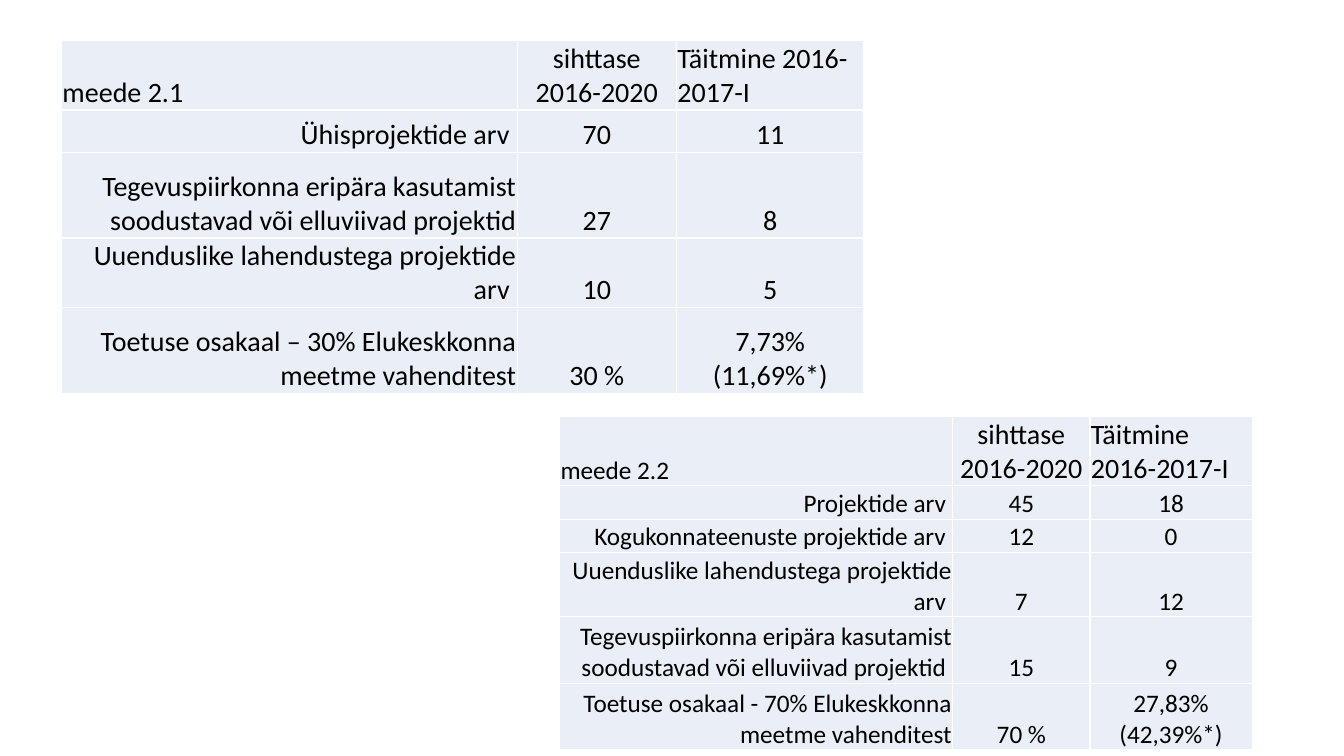
from lxml import etree
from pptx import Presentation
from pptx.dml.color import RGBColor
from pptx.enum.text import MSO_ANCHOR, PP_ALIGN
from pptx.oxml.ns import qn
from pptx.util import Inches, Pt

LEFT, CENTER, RIGHT = PP_ALIGN.LEFT, PP_ALIGN.CENTER, PP_ALIGN.RIGHT
BOTTOM = MSO_ANCHOR.BOTTOM
BLACK = RGBColor(0x00, 0x00, 0x00)
WHITE = RGBColor(0xFF, 0xFF, 0xFF)
PALE_BLUE = RGBColor(0xEA, 0xEF, 0xF7)
FONT = "Calibri"
HEADER_SIZE = 20
HEADERS = ("sihttase 2016-2020", "Täitmine 2016-2017-I")

MEASURE_21 = [
    ("meede 2.1", *HEADERS),
    ("Ühisprojektide arv ", "70", "11"),
    ("Tegevuspiirkonna eripära kasutamist soodustavad või elluviivad projektid", "27", "8"),
    ("Uuenduslike lahendustega projektide arv ", "10", "5"),
    ("Toetuse osakaal – 30% Elukeskkonna meetme vahenditest", "30 %", "7,73% (11,69%*)"),
]
MEASURE_22 = [
    ("meede 2.2", *HEADERS),
    ("Projektide arv ", "45", "18"),
    ("Kogukonnateenuste projektide arv ", "12", "0"),
    ("Uuenduslike lahendustega projektide arv ", "7", "12"),
    ("Tegevuspiirkonna eripära kasutamist soodustavad või elluviivad projektid ", "15", "9"),
    ("Toetuse osakaal - 70% Elukeskkonna meetme vahenditest", "70 %", "27,83% (42,39%*)"),
]


def write_text(tf, text, size=18, align=LEFT, color=BLACK):
    p = tf.paragraphs[0]
    p.alignment = align
    r = p.add_run()
    r.text = text
    r.font.name = FONT
    r.font.size = Pt(size)
    r.font.color.rgb = color


def add_borders(cell, color=WHITE, width=1):
    tc_pr = cell._tc.get_or_add_tcPr()
    for side in ("lnL", "lnR", "lnT", "lnB"):
        ln = etree.SubElement(tc_pr, qn(f"a:{side}"), w=str(Pt(width)))
        fill = etree.SubElement(ln, qn("a:solidFill"))
        etree.SubElement(fill, qn("a:srgbClr"), val=str(color))


def format_cell(cell):
    cell.margin_left = cell.margin_right = cell.margin_top = Inches(0.01)
    cell.margin_bottom = 0
    cell.vertical_anchor = BOTTOM
    add_borders(cell)
    cell.fill.solid()
    cell.fill.fore_color.rgb = PALE_BLUE


def cell_align(row, col):
    if row == 0:
        return CENTER if col == 1 else LEFT
    return RIGHT if col == 0 else CENTER


def add_measure_table(s, rows, left, top, widths, heights, size):
    frame = s.shapes.add_table(len(rows), len(widths), Inches(left), Inches(top),
                               Inches(sum(widths)), Inches(sum(heights)))
    table = frame.table
    for column, width in zip(table.columns, widths):
        column.width = Inches(width)
    for i, (texts, height) in enumerate(zip(rows, heights)):
        table.rows[i].height = Inches(height)
        for j, text in enumerate(texts):
            cell = table.cell(i, j)
            format_cell(cell)
            text_size = HEADER_SIZE if i == 0 and j > 0 else size
            write_text(cell.text_frame, text, size=text_size, align=cell_align(i, j))


def main():
    prs = Presentation()
    prs.slide_width, prs.slide_height = Inches(13.33), Inches(7.5)
    s = prs.slides.add_slide(prs.slide_layouts[6])
    add_measure_table(s, MEASURE_21, 0.61, 0.4, (4.52, 1.58, 1.86),
                      (0.63, 0.42, 0.85, 0.63, 0.85), size=20)
    add_measure_table(s, MEASURE_22, 5.55, 4.13, (3.9, 1.36, 1.61),
                      (0.33, 0.33, 0.33, 0.64, 0.66, 0.66), size=18)
    prs.save("out.pptx")


if __name__ == "__main__":
    main()
